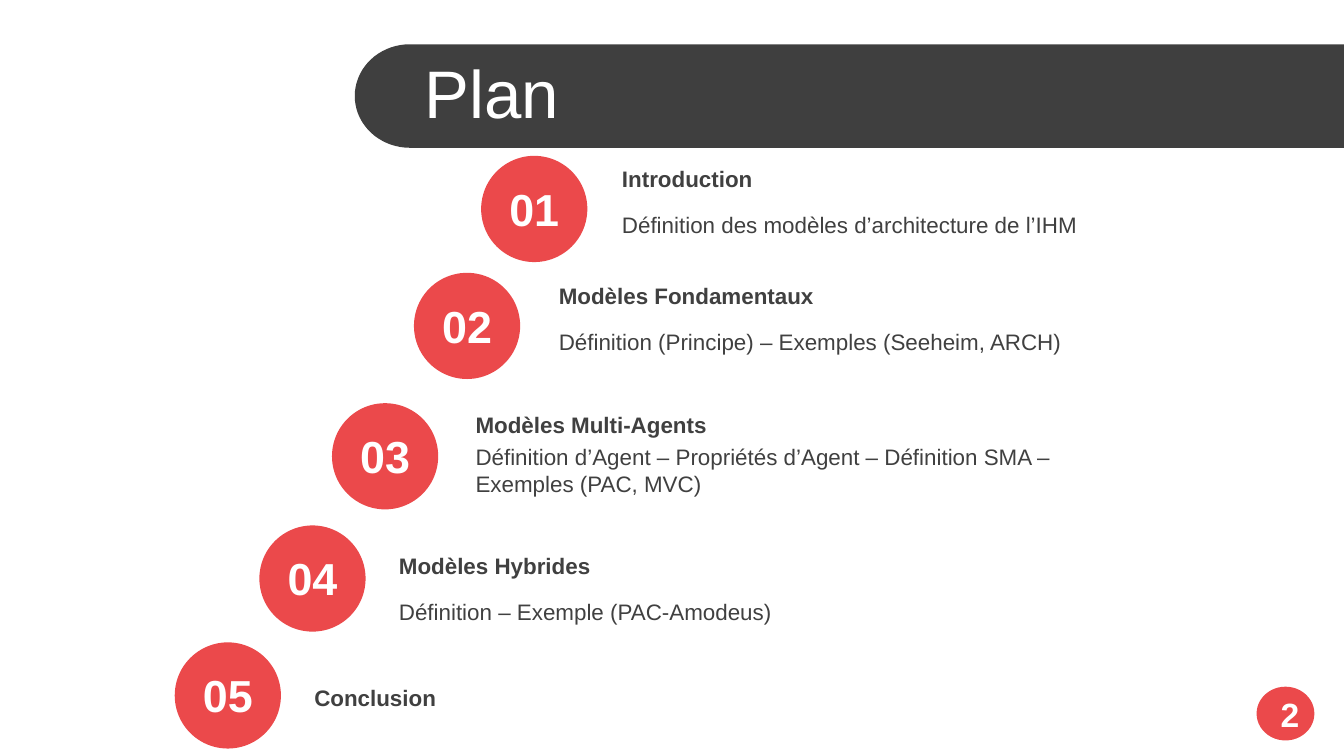
import math

from pptx import Presentation
from pptx.dml.color import RGBColor
from pptx.enum import shapes, text
from pptx.util import Inches, Pt

FONT = "Arial"
DARK, GREY, RED, WHITE = "3F3F3F", "404040", "EB494B", "FFFFFF"
PAGE_WIDTH = 10
PAGE_HEIGHT = PAGE_WIDTH * 9 / 16
DISC = 0.79
LINE = 0.3

CHAPTERS = [
    (3.58, 1.16, 4.53, 1.18, "Introduction",
     "Définition des modèles d’architecture de l’IHM", 1.52, LINE),
    (3.08, 2.03, 4.06, 2.05, "Modèles Fondamentaux",
     "Définition (Principe) – Exemples (Seeheim, ARCH)", 2.39, LINE),
    (2.47, 3.0, 3.44, 3.01, "Modèles Multi-Agents",
     "Définition d’Agent – Propriétés d’Agent – Définition SMA – Exemples (PAC, MVC)",
     3.25, 0.5),
    (1.93, 3.91, 2.87, 4.06, "Modèles Hybrides",
     "Définition – Exemple (PAC-Amodeus)", 4.4, LINE),
    (1.3, 4.78, 2.24, 5.04, "Conclusion", None, None, None),
]


def color(value):
    return RGBColor.from_string(value)


def paint(shape, fill):
    shape.shadow.inherit = False
    shape.fill.solid()
    shape.fill.fore_color.rgb = color(fill)
    shape.line.fill.background()


def add_banner(page, left, top, right, height, bulge):
    radius = height / 2
    center_x, center_y = left + bulge, top + radius
    angles = [math.radians(90 + 5 * step) for step in range(37)]
    arc = [(Inches(center_x + bulge * math.cos(angle)),
            Inches(center_y + radius * math.sin(angle))) for angle in angles]
    corners = [(Inches(right), Inches(top)), (Inches(right), Inches(top + height))]
    outline = page.shapes.build_freeform(*arc[0])
    outline.add_line_segments(arc[1:] + corners, close=True)
    paint(outline.convert_to_shape(), DARK)


def add_disc(page, left, top, width, height):
    disc = page.shapes.add_shape(shapes.MSO_SHAPE.OVAL, Inches(left), Inches(top),
                                 Inches(width), Inches(height))
    paint(disc, RED)


def add_text(page, left, top, width, height, words, size, ink, bold=False, centered=False):
    box = page.shapes.add_textbox(Inches(left), Inches(top), Inches(width), Inches(height))
    frame = box.text_frame
    frame.word_wrap = True
    frame.vertical_anchor = text.MSO_ANCHOR.MIDDLE
    para = frame.paragraphs[0]
    para.alignment = text.PP_ALIGN.CENTER if centered else text.PP_ALIGN.LEFT
    span = para.add_run()
    span.text = words
    span.font.name = FONT
    span.font.size = Pt(size)
    span.font.bold = bold
    span.font.color.rgb = color(ink)


def add_chapter(page, number, disc_left, disc_top, left, top, title,
                detail, detail_top, detail_height):
    add_disc(page, disc_left, disc_top, DISC, DISC)
    add_text(page, disc_left, disc_top + 0.14, DISC, 0.5, f"{number:02}", 24, WHITE,
             bold=True, centered=True)
    add_text(page, left, top, 5.04, LINE, title, 12, GREY, bold=True)
    if detail:
        add_text(page, left, detail_top, 5.04, detail_height, detail, 12, GREY)


def main():
    deck = Presentation()
    deck.slide_width, deck.slide_height = Inches(PAGE_WIDTH), Inches(PAGE_HEIGHT)
    page = deck.slides.add_slide(deck.slide_layouts[6])
    add_banner(page, 2.64, 0.33, PAGE_WIDTH, 0.77, 0.41)
    add_text(page, 3.06, 0.37, 6.94, 0.63, "Plan", 36, WHITE)
    for number, chapter in enumerate(CHAPTERS, 1):
        add_chapter(page, number, *chapter)
    add_disc(page, 9.35, 5.11, 0.43, 0.4)
    add_text(page, 9.43, 5.11, 0.28, 0.4, "2", 18, WHITE, bold=True, centered=True)
    deck.save("out.pptx")


if __name__ == "__main__":
    main()
